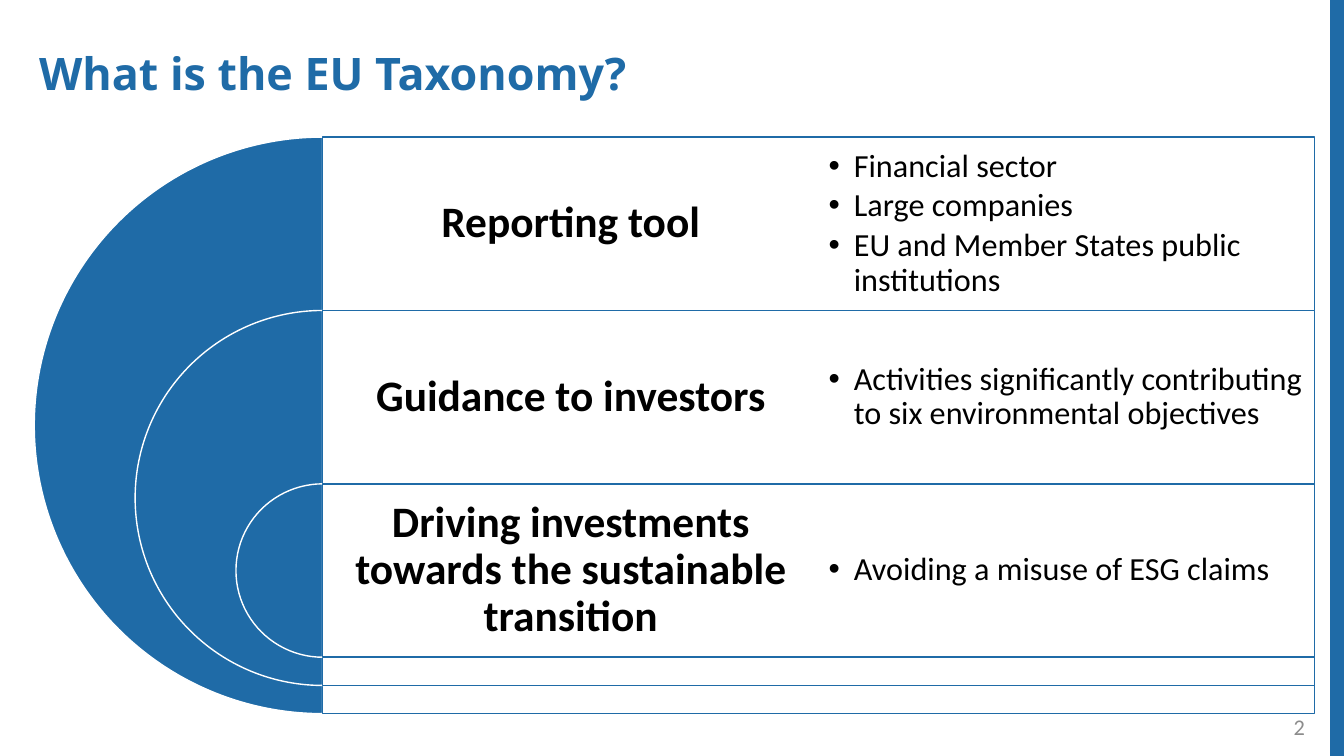
from lxml.etree import SubElement
from pptx import Presentation
from pptx.dml.color import RGBColor
from pptx.enum.shapes import MSO_CONNECTOR as Connector, MSO_SHAPE as Shape
from pptx.enum.text import MSO_ANCHOR as Anchor, PP_ALIGN as Align
from pptx.oxml.ns import qn
from pptx.util import Inches, Pt

BLUE = RGBColor(0x1F, 0x6B, 0xA7)
WHITE = RGBColor(0xFF, 0xFF, 0xFF)
BLACK = RGBColor(0x00, 0x00, 0x00)
GREY = RGBColor(0x8C, 0x8C, 0x8C)

CELL = 0.04
PAGE_WIDTH, PAGE_HEIGHT = 333.25, 187.5
LEFT, TOP = 80, 34
COLUMN, ROW, GAP = 123, 43, 7

TOPICS = [
    ("Reporting tool",
     ["Financial sector", "Large companies", "EU and Member States public institutions"]),
    ("Guidance to investors",
     ["Activities significantly contributing to six environmental objectives"]),
    ("Driving investments towards the sustainable transition",
     ["Avoiding a misuse of ESG claims"]),
]


def cells(*counts):
    return [Inches(count * CELL) for count in counts]


class TaxonomySlide:
    body_font = "Calibri"
    title_font = "Open Sans"

    def __init__(self, deck):
        self.page = deck.slides.add_slide(deck.slide_layouts[6])

    def edge_bar(self, x, width):
        bar = self.page.shapes.add_connector(
            Connector.STRAIGHT, *cells(x, 0, x, PAGE_HEIGHT))
        bar.line.color.rgb = BLUE
        bar.line.width = Pt(width)
        SubElement(bar._element.spPr, qn("a:effectLst"))

    def shape(self, kind, frame, fill, line):
        shape = self.page.shapes.add_shape(kind, *cells(*frame))
        shape.shadow.inherit = False
        shape.fill.solid()
        shape.fill.fore_color.rgb = fill
        shape.line.color.rgb = line
        shape.line.width = Pt(1)
        return shape

    def half_disc(self, top, diameter):
        frame = (LEFT - diameter / 2, top, diameter, diameter)
        disc = self.shape(Shape.PIE, frame, BLUE, WHITE)
        disc.adjustments[0], disc.adjustments[1] = 54, 162

    def panel(self, top, height):
        panel = self.shape(Shape.RECTANGLE, (LEFT, top, 2 * COLUMN, height), WHITE, BLUE)
        color = panel.fill._xPr.find(qn("a:solidFill"))[0]
        SubElement(color, qn("a:alpha"), val="90000")

    def text(self, frame, lines, size, color=BLACK, font=body_font, bold=False,
             align=Align.LEFT, anchor=Anchor.MIDDLE, inset=None,
             spacing=0.9, after=0, bullet=False):
        box = self.page.shapes.add_textbox(*cells(*frame)).text_frame
        box.word_wrap = True
        box.vertical_anchor = anchor
        if inset is not None:
            box.margin_left = box.margin_right = Inches(inset)
            box.margin_top = box.margin_bottom = Inches(inset)
        for index, line in enumerate(lines):
            para = box.paragraphs[0] if index == 0 else box.add_paragraph()
            para.text = line
            para.alignment = align
            para.line_spacing = spacing
            para.space_after = Pt(after)
            if bullet:
                self.bullet(para)
            para.font.name = font
            para.font.size = Pt(size)
            para.font.bold = bold
            para.font.color.rgb = color

    def bullet(self, para):
        properties = para._p.get_or_add_pPr()
        properties.set("marL", str(Inches(0.25)))
        properties.set("indent", str(-Inches(0.25)))
        SubElement(properties, qn("a:buFont"), typeface="Arial")
        SubElement(properties, qn("a:buChar"), char="•")

    def topic(self, index, heading, points):
        top = TOP + index * ROW
        below = len(TOPICS) - 1 - index
        height = ROW + below * (ROW + GAP)
        self.half_disc(top, height)
        self.panel(top, height)
        self.text((LEFT, top, COLUMN, ROW), [heading], 31, bold=True,
                  align=Align.CENTER, inset=0.13, after=10.85)
        self.text((LEFT + COLUMN, top, COLUMN, ROW), points, 23,
                  inset=0.1, after=3.45, bullet=True)


def main():
    deck = Presentation()
    deck.slide_width, deck.slide_height = cells(PAGE_WIDTH, PAGE_HEIGHT)
    slide = TaxonomySlide(deck)
    slide.edge_bar(331.75, 12)
    for index, (heading, points) in enumerate(TOPICS):
        slide.topic(index, heading, points)
    slide.text((7.25, 11.5, 299, 14.5), ["What is the EU Taxonomy?"], 32, BLUE,
               slide.title_font, bold=True, anchor=Anchor.TOP)
    slide.text((251, 175.25, 75, 10), ["2"], 16, GREY, align=Align.RIGHT, spacing=1.0)
    deck.save("out.pptx")


if __name__ == "__main__":
    main()
